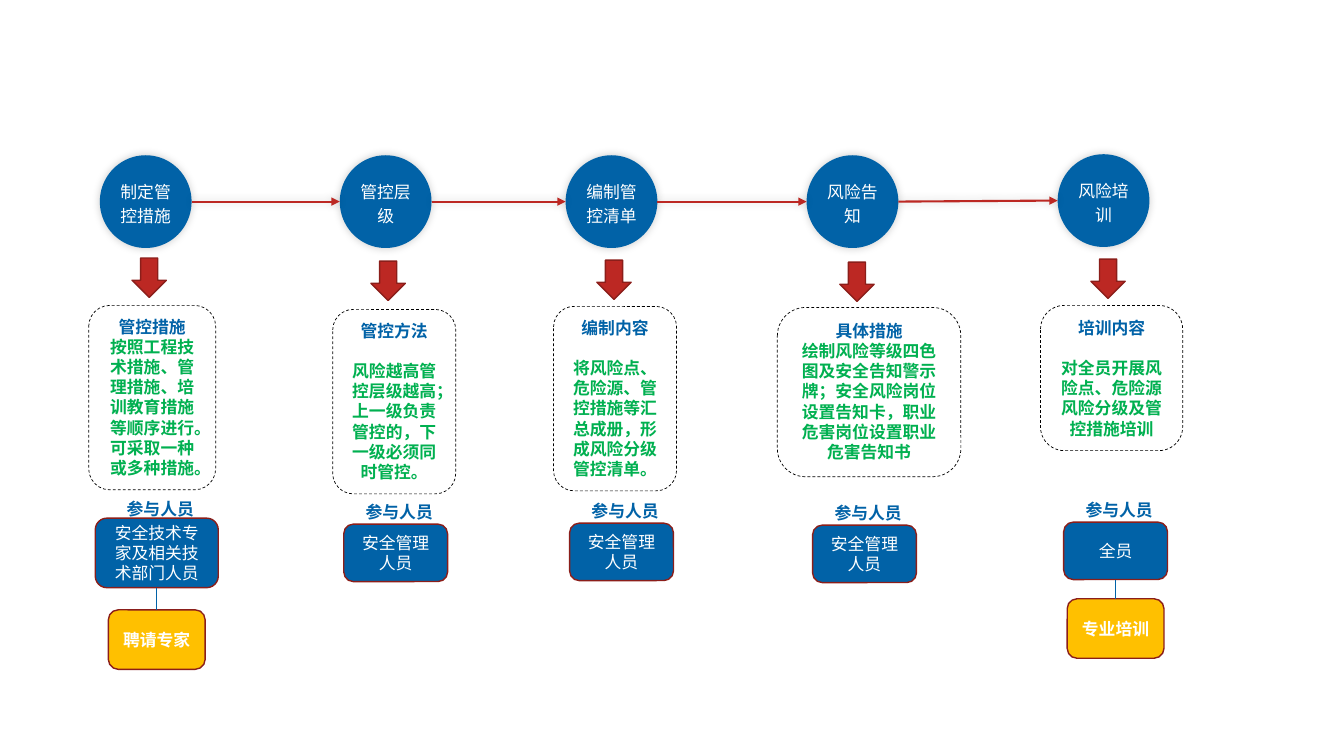
"""Build a slide showing the five steps of risk control and who takes part."""
from dataclasses import dataclass
from typing import Optional

from lxml import etree
from pptx import Presentation
from pptx.dml.color import RGBColor
from pptx.enum.dml import MSO_LINE
from pptx.enum.lang import MSO_LANGUAGE_ID
from pptx.enum.shapes import MSO_CONNECTOR, MSO_SHAPE
from pptx.enum.text import MSO_ANCHOR, MSO_AUTO_SIZE, PP_ALIGN
from pptx.oxml.ns import qn
from pptx.util import Inches, Pt

OVAL, ROUND = MSO_SHAPE.OVAL, MSO_SHAPE.ROUNDED_RECTANGLE
DOWN, STRAIGHT = MSO_SHAPE.DOWN_ARROW, MSO_CONNECTOR.STRAIGHT
TOP, MIDDLE = MSO_ANCHOR.TOP, MSO_ANCHOR.MIDDLE
GROW, CENTER = MSO_AUTO_SIZE.SHAPE_TO_FIT_TEXT, PP_ALIGN.CENTER
DASH, CHINESE = MSO_LINE.DASH, MSO_LANGUAGE_ID.SIMPLIFIED_CHINESE

BLUE, RED, DARK_RED = "0162A7", "BC2823", "8B1E1A"
GREEN, GOLD, WHITE, BLACK = "00B050", "FFC000", "FFFFFF", "000000"
CIRCLE_W, CIRCLE_H = 0.91, 0.92
ARROW_W, ARROW_H = 0.34, 0.39
EXTRA_W, EXTRA_H = 0.96, 0.59


@dataclass
class Step:
    name: str
    circle: tuple[float, float]
    arrow: tuple[float, float]
    box: tuple[float, float, float, float]
    heading: str
    detail: str
    gap: float
    staff: str = "安全管理人员"
    staff_size: tuple[float, float] = (1.03, 0.57)
    extra: Optional[str] = None
    extra_top: float = 0


STEPS = [
    Step("制定管控措施", (0.99, 1.54), (1.31, 2.56), (0.88, 3.03, 1.26, 1.83), "管控措施",
         "按照工程技术措施、管理措施、培训教育措施等顺序进行。可采取一种或多种措施。", 0,
         "安全技术专家及相关技术部门人员", (1.22, 0.69), "聘请专家", 6.05),
    Step("管控层级", (3.37, 1.54), (3.68, 2.59), (3.3, 3.07, 1.22, 1.83), "管控方法",
         "风险越高管控层级越高；上一级负责管控的，下一级必须同时管控。", 14.5),
    Step("编制管控清单", (5.61, 1.54), (5.92, 2.58), (5.49, 3.04, 1.22, 1.83), "编制内容",
         "将风险点、危险源、管控措施等汇总成册，形成风险分级管控清单。", 14.5),
    Step("风险告知", (8, 1.54), (8.33, 2.6), (7.71, 3.05, 1.82, 1.68), "具体措施",
         "绘制风险等级四色图及安全告知警示牌；安全风险岗位设置告知卡，职业危害岗位设置职业危害告知书", 0),
    Step("风险培训", (10.49, 1.53), (10.82, 2.57), (10.32, 3.03, 1.41, 1.44), "培训内容",
         "对全员开展风险点、危险源风险分级及管控措施培训", 14.5,
         "全员", extra="专业培训", extra_top=5.94),
]


def rgb(value: str) -> RGBColor:
    return RGBColor.from_string(value)


def add_text(p, text: str, *, color: str = WHITE, bold: bool = False,
             font: str = "Calibri", spacing: float = 1, before: float = 0) -> None:
    p.alignment, p.line_spacing, p.space_before = CENTER, spacing, Pt(before)
    p._p.get_or_add_pPr().set("hangingPunct", "1")
    r = p.add_run()
    r.text = text
    r.font.name, r.font.size, r.font.bold = font, Pt(12), bold
    r.font.color.rgb = rgb(color)
    r.font.language_id = CHINESE


def add_soft_shadow(effects) -> None:
    shadow = etree.SubElement(effects, qn("a:outerShdw"), blurRad=str(Pt(6)),
                              dist="0", dir="18900000", algn="ctr", rotWithShape="0")
    color = etree.SubElement(shadow, qn("a:srgbClr"), val=BLACK)
    etree.SubElement(color, qn("a:alpha"), val="20000")


def add_shape(s, kind, left: float, top: float, width: float, height: float, *,
              fill: Optional[str] = None, line: Optional[str] = None,
              weight: float = 1, anchor=MIDDLE):
    sp = s.shapes.add_shape(kind, Inches(left), Inches(top), Inches(width), Inches(height))
    sp.shadow.inherit = False
    if fill:
        sp.fill.solid()
        sp.fill.fore_color.rgb = rgb(fill)
    else:
        sp.fill.background()
    if line:
        sp.line.color.rgb = rgb(line)
        sp.line.width = Pt(weight)
    else:
        sp.line.fill.background()
    sp.text_frame.word_wrap = True
    sp.text_frame.vertical_anchor = anchor
    return sp


def add_line(s, start: tuple[float, float], end: tuple[float, float],
             color: str, weight: float, arrow: bool = False):
    cn = s.shapes.add_connector(STRAIGHT, *map(Inches, start + end))
    cn.line.color.rgb = rgb(color)
    cn.line.width = Pt(weight)
    sppr = cn._element.spPr
    if arrow:
        etree.SubElement(sppr.find(qn("a:ln")), qn("a:tailEnd"), type="triangle")
    effects = etree.SubElement(sppr, qn("a:effectLst"))
    if arrow:
        add_soft_shadow(effects)
    return cn


def add_circle(s, step: Step) -> None:
    sp = add_shape(s, OVAL, *step.circle, CIRCLE_W, CIRCLE_H, fill=BLUE)
    add_soft_shadow(sp._element.spPr.find(qn("a:effectLst")))
    tf = sp.text_frame
    tf.margin_left = tf.margin_right = Inches(0.07)
    tf.margin_top = tf.margin_bottom = Inches(0.04)
    add_text(tf.paragraphs[0], step.name, font="Arial", spacing=1.2)


def add_detail(s, step: Step) -> None:
    sp = add_shape(s, ROUND, *step.box, line=BLACK, weight=0.5, anchor=TOP)
    sp.line.dash_style = DASH
    tf = sp.text_frame
    tf.auto_size = GROW
    add_text(tf.paragraphs[0], step.heading, color=BLUE, bold=True)
    add_text(tf.add_paragraph(), step.detail, color=GREEN, bold=True, before=step.gap)


def add_people(s, step: Step) -> None:
    left, top = step.arrow
    center = left + 0.245
    label = s.shapes.add_textbox(Inches(left - 0.16), Inches(top + 2.34),
                                 Inches(0.88), Inches(0.3))
    label.text_frame.word_wrap = False
    label.text_frame.auto_size = GROW
    add_text(label.text_frame.paragraphs[0], "参与人员", color=BLUE, bold=True)

    width, height = step.staff_size
    staff_top = top + (2.58 if step.extra and height > 0.6 else 2.61)
    staff = add_shape(s, ROUND, center - width / 2, staff_top, width, height,
                      fill=BLUE, line=DARK_RED)
    add_text(staff.text_frame.paragraphs[0], step.staff)
    if step.extra:
        extra = add_shape(s, ROUND, center - EXTRA_W / 2, step.extra_top,
                          EXTRA_W, EXTRA_H, fill=GOLD, line=DARK_RED)
        add_text(extra.text_frame.paragraphs[0], step.extra, bold=True)
        cn = add_line(s, (center, step.extra_top), (center, staff_top + height), BLUE, 0.5)
        cn.begin_connect(extra, 0)
        cn.end_connect(staff, 2)


def main() -> None:
    prs = Presentation()
    prs.slide_width, prs.slide_height = Inches(13.33), Inches(7.5)
    s = prs.slides.add_slide(prs.slide_layouts[6])
    for step in STEPS:
        add_circle(s, step)
        add_shape(s, DOWN, *step.arrow, ARROW_W, ARROW_H, fill=RED, line=DARK_RED)
        add_detail(s, step)
        add_people(s, step)
    for step, following in zip(STEPS, STEPS[1:]):
        (x1, y1), (x2, y2) = step.circle, following.circle
        add_line(s, (x1 + CIRCLE_W, y1 + CIRCLE_H / 2), (x2, y2 + CIRCLE_H / 2),
                 RED, 1.5, arrow=True)
    prs.save("out.pptx")


if __name__ == "__main__":
    main()
